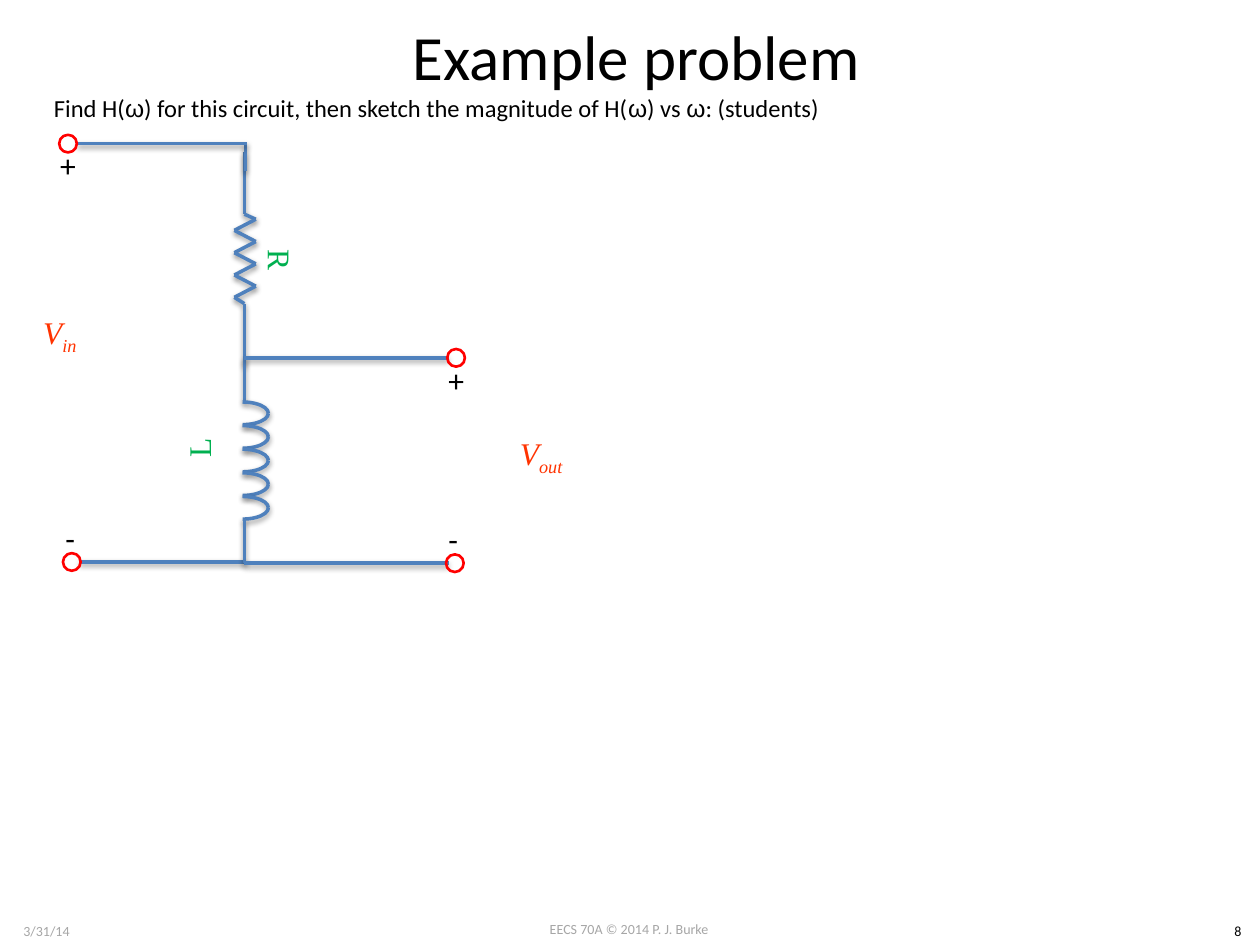
from itertools import pairwise

from pptx import Presentation
from pptx import util as u
from pptx.dml.color import RGBColor
from pptx.enum import shapes, text
from pptx.oxml import parse_xml

BLUE = RGBColor(0x4F, 0x81, 0xBD)
RED = RGBColor(0xFF, 0x00, 0x00)
ORANGE = RGBColor(0xFF, 0x33, 0x00)
GREEN = RGBColor(0x00, 0xB0, 0x50)
GRAY = RGBColor(0xA6, 0xA6, 0xA6)
BLACK = RGBColor(0x00, 0x00, 0x00)

SHADOW = (
    '<a:effectLst xmlns:a="http://schemas.openxmlformats.org/drawingml/2006/main">'
    '<a:outerShdw blurRad="40000" dist="20000" dir="5400000" rotWithShape="0">'
    '<a:srgbClr val="000000"><a:alpha val="38000"/></a:srgbClr>'
    "</a:outerShdw></a:effectLst>"
)
CENTER = text.PP_ALIGN.CENTER
MIDDLE = text.MSO_ANCHOR.MIDDLE
SERIF = "Times New Roman"


def write(para, words, size=18, font="Calibri", color=BLACK, italic=False, base=0):
    run = para.add_run()
    run.text = words
    run.font.size = u.Pt(size)
    run.font.name = font
    run.font.color.rgb = color
    if italic:
        run.font.italic = True
    if base:
        run.font._element.set("baseline", str(base * 1000))


class Sketch:
    """Draws circuit elements and labels on one slide."""

    def __init__(self, slide):
        self.slide = slide
        self.wide = u.Pt(2)

    def title(self, words, *box):
        head = self.slide.shapes.title
        head.left, head.top, head.width, head.height = map(u.Inches, box)
        head.text_frame.vertical_anchor = MIDDLE
        para = head.text_frame.paragraphs[0]
        para.alignment = CENTER
        write(para, words, size=36)

    def label(self, box, *runs, align=None, anchor=None, wrap=True, turn=0, **style):
        item = self.slide.shapes.add_textbox(*map(u.Inches, box))
        item.rotation = turn
        frame = item.text_frame
        frame.word_wrap = wrap
        if anchor is None:
            frame.auto_size = text.MSO_AUTO_SIZE.SHAPE_TO_FIT_TEXT
        else:
            frame.vertical_anchor = anchor
        para = frame.paragraphs[0]
        para.alignment = align
        for words, extra in runs:
            write(para, words, **{**style, **extra})
        return para

    def ink(self, item):
        item.line.color.rgb = BLUE
        item.line.width = self.wide
        item._element.spPr.append(parse_xml(SHADOW))

    def wire(self, *points):
        for start, end in pairwise(points):
            ends = map(u.Inches, (*start, *end))
            self.ink(self.slide.shapes.add_connector(shapes.MSO_CONNECTOR.STRAIGHT, *ends))

    def oval(self, kind, *box):
        item = self.slide.shapes.add_shape(kind, *map(u.Inches, box))
        item.fill.background()
        return item

    def coil(self, left, top):
        for start, end in ((270, 0), (0, 90)):
            arc = self.oval(shapes.MSO_SHAPE.ARC, left, top, 0.41, 0.18)
            arc.adjustments[0], arc.adjustments[1] = start * 0.6, end * 0.6
            self.ink(arc)

    def port(self, left, top):
        ring = self.oval(shapes.MSO_SHAPE.OVAL, left, top, 0.14, 0.14)
        ring.line.color.rgb = RED
        ring.line.width = u.Pt(1.5)
        ring.shadow.inherit = False

    def sign(self, mark, left, top, width):
        self.label((left, top, width, 0.4), (mark, {}), wrap=False)

    def volt(self, sub, left, top):
        self.label((left, top, 0.77, 0.61), ("V", {}), (sub, {"base": -25}),
                   align=CENTER, anchor=MIDDLE, font=SERIF, color=ORANGE, italic=True)

    def name(self, letter, left, top, turn):
        self.label((left, top, 1.19, 0.73), (letter, {}), align=CENTER,
                   anchor=MIDDLE, turn=turn, font=SERIF, color=GREEN)


def main():
    deck = Presentation()
    deck.slide_width, deck.slide_height = u.Inches(10), u.Inches(7.5)
    sketch = Sketch(deck.slides.add_slide(deck.slide_layouts[5]))

    for words, box, color in (
        ("EECS 70A © 2014 P. J. Burke", (3.83, 7.26, 2.33, 0.24), GRAY),
        ("3/31/14", (0, 7.27, 0.74, 0.24), GRAY),
        ("8", (9.65, 7.27, 0.35, 0.24), BLACK),
    ):
        sketch.label(box, (words, {}), align=CENTER, size=8, color=color)

    sketch.title("Example problem", 0.55, 0, 9, 0.87)
    omega = ("ω", {"font": "Arial"})
    task = sketch.label(
        (0.33, 0.69, 8.91, 0.34),
        ("Find H(", {}), omega,
        (") for this circuit, then sketch the magnitude of H(", {}), omega,
        (") vs ", {}), omega, (": (students)", {}), size=14)
    props = task._p.get_or_add_pPr()
    props.set("marL", str(u.Inches(0.38)))
    props.set("indent", str(-u.Inches(0.38)))

    mid = 1.94
    zigzag = [(1.86 if i % 2 else 2.03, 1.74 + i * 0.62 / 7) for i in range(8)]
    sketch.name("R", 1.63, 1.7, 90)
    sketch.wire((mid, 1.21), (mid, 1.7), *zigzag, (mid, 2.41), (mid, 2.9))
    sketch.wire((0.63, 4.46), (1.95, 4.46))
    sketch.wire((1.95, 1.36), (1.95, 1.14))
    sketch.wire((1.96, 1.14), (0.62, 1.14))

    sketch.wire((mid, 3.19), (mid, 2.84))
    for i in range(5):
        sketch.coil(1.72, 3.19 + i * 0.75 / 4)
    sketch.wire((mid, 4.47), (mid, 4.12))
    sketch.name("L", 0.98, 3.19, 270)
    for y in (2.84, 4.47):
        sketch.wire((mid, y), (3.56, y))

    sketch.volt("out", 3.91, 3.31)
    sketch.volt("in", 0.09, 2.35)
    for spot in ((3.55, 2.77), (3.54, 4.4), (0.47, 1.07), (0.5, 4.39)):
        sketch.port(*spot)
    for mark, left, top, width in (
        ("+", 3.46, 2.82, 0.33), ("-", 3.46, 4.08, 0.28),
        ("+", 0.38, 1.11, 0.33), ("-", 0.42, 4.07, 0.28),
    ):
        sketch.sign(mark, left, top, width)

    deck.save("out.pptx")


if __name__ == "__main__":
    main()
